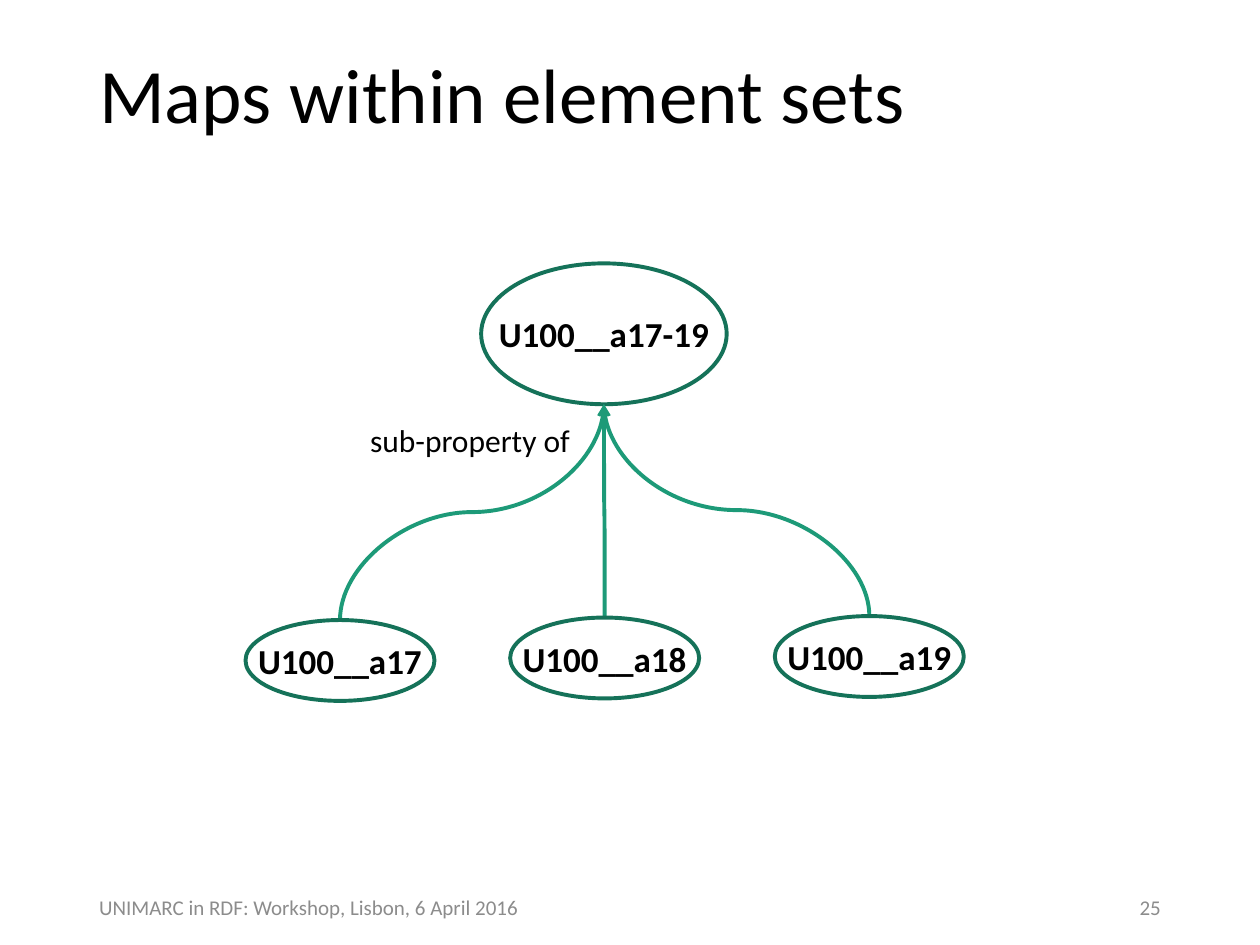
from pptx import Presentation
from pptx.dml.color import RGBColor
from pptx.enum.shapes import MSO_CONNECTOR as Connector, MSO_SHAPE as Shape
from pptx.enum.text import MSO_ANCHOR as Anchor, PP_ALIGN as Align
from pptx.oxml.ns import qn
from pptx.util import Cm, Pt
from lxml import etree

COLOURS = {"text": "000000", "muted": "8C8C8C", "outline": "157259", "arrow": "1D9A78"}
FONT = "Calibri"
LINE_WIDTH = Pt(2.25)
MARGIN = 1.75
CONTENT_WIDTH = 21.9


def colour(name):
    return RGBColor.from_string(COLOURS[name])


def add_text(shapes, box, text, size, ink="text", bold=False, wrap=True,
             align=Align.LEFT, anchor=Anchor.TOP):
    label = shapes.add_textbox(*map(Cm, box))
    frame = label.text_frame
    frame.text = text
    frame.word_wrap = wrap
    frame.vertical_anchor = anchor
    para = frame.paragraphs[0]
    para.alignment = align
    font = para.runs[0].font
    font.name, font.size, font.bold = FONT, Pt(size), bold
    font.color.rgb = colour(ink)
    return para


def add_node(page, box, text):
    """Group an outlined ellipse with a label centred on it."""
    left, top, width, height = box
    group = page.shapes.add_group_shape()
    ellipse = group.shapes.add_shape(Shape.OVAL, *map(Cm, box))
    ellipse.shadow.inherit = False
    ellipse.fill.background()
    ellipse.line.color.rgb = colour("outline")
    ellipse.line.width = LINE_WIDTH
    label_height = 1.12
    label_top = top + (height - label_height) / 2
    add_text(group.shapes, (left, label_top, width, label_height), text, 20,
             bold=True, wrap=False, align=Align.CENTER, anchor=Anchor.MIDDLE)


def add_rising_arrow(page, start, end):
    """Draw an S-curve that leaves start upwards and enters end from below."""
    (start_x, start_y), (end_x, end_y) = start, end
    middle_x, middle_y = (start_x + end_x) / 2, (start_y + end_y) / 2
    half_rise, half_run = (start_y - end_y) / 2, abs(end_x - start_x) / 2
    # The curve is laid out sideways, then turned a quarter about its centre.
    goes_right = end_x > start_x
    side = half_rise if goes_right else -half_rise
    arrow = page.shapes.add_connector(
        Connector.CURVE,
        Cm(middle_x + side), Cm(middle_y + half_run),
        Cm(middle_x - side), Cm(middle_y - half_run))
    arrow.line.color.rgb = colour("arrow")
    arrow.line.width = LINE_WIDTH
    properties = arrow._element.spPr
    quarter_turns = 1 if goes_right else 3
    properties.find(qn("a:xfrm")).set("rot", str(quarter_turns * 90 * 60000))
    etree.SubElement(properties.find(qn("a:ln")), qn("a:tailEnd"), type="triangle")
    etree.SubElement(properties, qn("a:effectLst"))


def add_title(page, box):
    para = add_text(page.shapes, box, "Maps within element sets", 44)
    para.line_spacing = 0.9


def add_property_map(page, box):
    left, top, width, height = box
    child_width, child_height = 3.81, 1.63
    root_left, root_width, root_height = 4.75, 4.95, 2.84
    step = (width - child_width) / 2
    root_bottom = (left + root_left + root_width / 2, top + root_height)

    add_node(page, (left + root_left, top, root_width, root_height), "U100__a17-19")
    child_drops = {"U100__a17": 7.19, "U100__a18": 7.14, "U100__a19": 7.11}
    for column, (name, drop) in enumerate(child_drops.items()):
        child_left, child_top = left + column * step, top + drop
        add_rising_arrow(page, (child_left + child_width / 2, child_top), root_bottom)
        add_node(page, (child_left, child_top, child_width, child_height), name)
    add_text(page.shapes, (left + 2.26, top + 3.05, 4.6, 1.02), "sub-property of", 18,
             wrap=False)


def add_footer(page, box):
    left, top, width, height = box
    number_width = 5.72
    add_text(page.shapes, (left, top, 10.21, height),
             "UNIMARC in RDF: Workshop, Lisbon, 6 April 2016", 12, "muted",
             anchor=Anchor.BOTTOM)
    add_text(page.shapes, (left + width - number_width, top, number_width, height),
             "25", 12, "muted", align=Align.RIGHT, anchor=Anchor.BOTTOM)


def main():
    deck = Presentation()
    deck.slide_width, deck.slide_height = Cm(25.4), Cm(19.05)
    page = deck.slides.add_slide(deck.slide_layouts[6])
    add_property_map(page, (4.95, 5.31, 14.48, 8.82))
    add_footer(page, (MARGIN, 17.65, CONTENT_WIDTH, 1.02))
    add_title(page, (MARGIN, 1.02, CONTENT_WIDTH, 1.96))
    deck.save("out.pptx")


if __name__ == "__main__":
    main()
